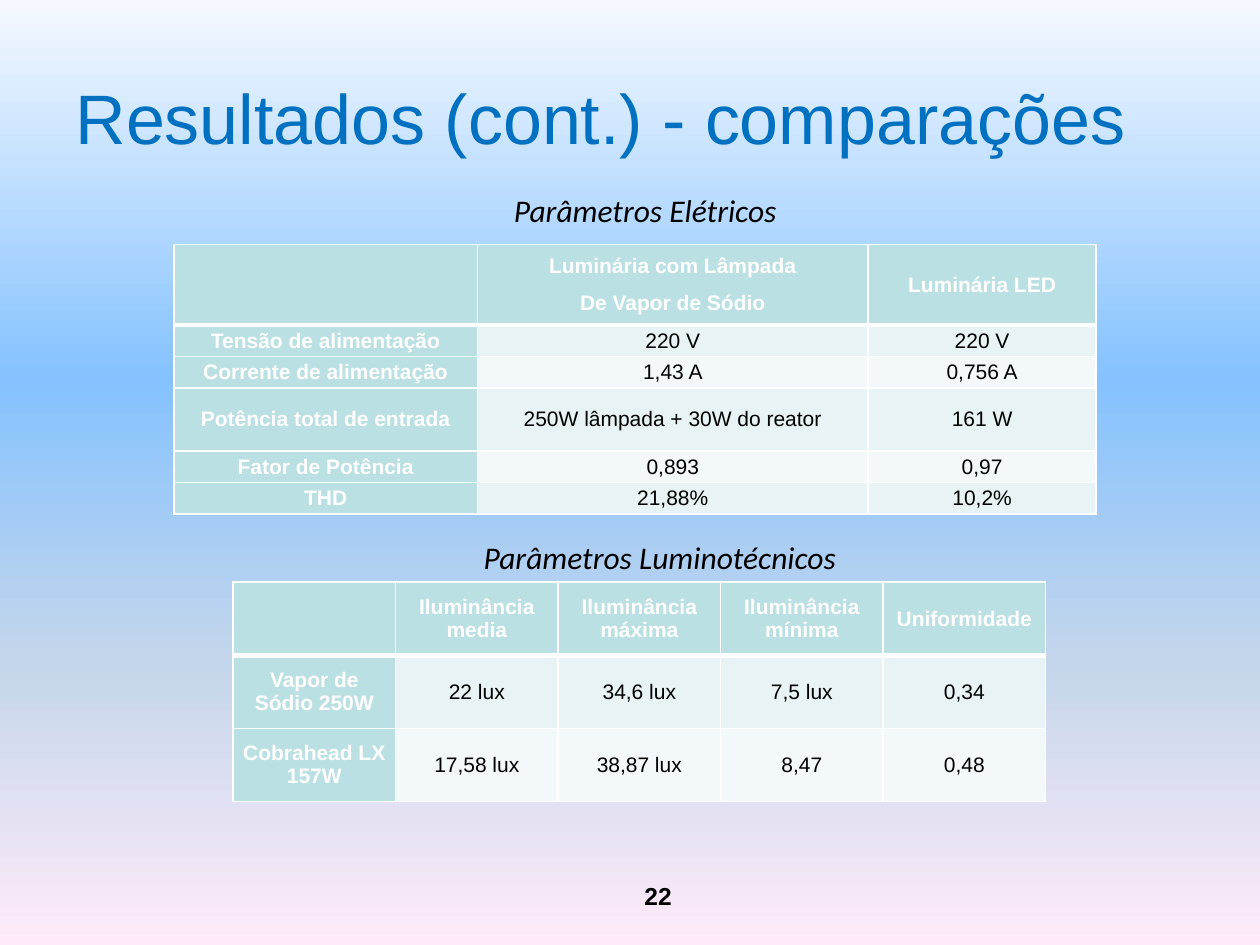
from pptx import Presentation
from pptx.dml.color import RGBColor
from pptx.enum.text import MSO_ANCHOR as Anchor, MSO_AUTO_SIZE as AutoSize, PP_ALIGN as Align
from pptx.oxml import parse_xml
from pptx.oxml.ns import nsdecls
from pptx.util import Inches, Pt

TITLE = "Resultados (cont.) - comparações"
PAGE_NUMBER = "22"
SECTIONS = [
    {
        "caption": "Parâmetros Elétricos",
        "caption_box": (3.98, 1.47, 2.31, 0.4),
        "origin": (1.38, 1.94),
        "columns": [2.41, 3.1, 1.81],
        "heights": [0.64, 0.25, 0.25, 0.5, 0.25, 0.25],
        "rows": [
            ["", "Luminária com Lâmpada\nDe Vapor de Sódio", "Luminária LED"],
            ["Tensão de alimentação", "220 V", "220 V"],
            ["Corrente de alimentação", "1,43 A", "0,756 A"],
            ["Potência total de entrada", "250W lâmpada + 30W do reator", "161 W"],
            ["Fator de Potência", "0,893", "0,97"],
            ["THD", "21,88%", "10,2%"],
        ],
    },
    {
        "caption": "Parâmetros Luminotécnicos",
        "caption_box": (3.74, 4.22, 3.03, 0.4),
        "origin": (1.85, 4.62),
        "columns": [1.29] * 5,
        "heights": [0.58] * 3,
        "rows": [
            ["", "Iluminância media", "Iluminância máxima", "Iluminância mínima", "Uniformidade"],
            ["Vapor de Sódio 250W", "22 lux", "34,6 lux", "7,5 lux", "0,34"],
            ["Cobrahead LX 157W", "17,58 lux", "38,87 lux", "8,47", "0,48"],
        ],
    },
]

THEME = {
    "title": {"name": "Arial", "size": Pt(40), "color": "0070C0"},
    "caption": {"name": "Calibri", "size": Pt(18), "italic": True, "color": "000000"},
    "number": {"name": "Arial", "size": Pt(14), "bold": True, "color": "000000"},
    "heading": {"name": "Arial", "size": Pt(12), "bold": True, "color": "FFFFFF"},
    "value": {"name": "Arial", "size": Pt(12), "bold": False, "color": "000000"},
    "heading_fill": "BBE0E3",
    "band_fills": ["F3F9FA", "E7F3F4"],
    "border": "FFFFFF",
    "thin": 1,
    "thick": 3,
    "background": [(0, "F5F9FF"), (40, "85C2FF"), (70, "C4D6EB"), (100, "FFEBFA")],
}
CELL_FORMAT = {
    "vertical_anchor": Anchor.MIDDLE,
    "margin_left": Inches(0.07),
    "margin_right": Inches(0.07),
    "margin_top": 0,
    "margin_bottom": 0,
}


def write(frame, text, style, align):
    frame.text = text
    for index, para in enumerate(frame.paragraphs):
        para.alignment = align
        if index:
            para.space_before = Pt(8)
        for span in para.runs:
            for name, value in THEME[style].items():
                if name == "color":
                    span.font.color.rgb = RGBColor.from_string(value)
                else:
                    setattr(span.font, name, value)


def add_text(page, text, place, style, align=Align.LEFT):
    box = page.shapes.add_textbox(*map(Inches, place))
    box.text_frame.word_wrap = False
    box.text_frame.auto_size = AutoSize.SHAPE_TO_FIT_TEXT
    write(box.text_frame, text, style, align)


def paint_background(page):
    fill = page.background.fill
    fill.gradient()
    fill.gradient_angle = 270
    stops = "".join(
        f'<a:gs pos="{share * 1000}"><a:srgbClr val="{color}"/></a:gs>'
        for share, color in THEME["background"]
    )
    old = page.background._cSld.xpath(".//a:gsLst")[0]
    old.getparent().replace(old, parse_xml(f'<a:gsLst {nsdecls("a")}>{stops}</a:gsLst>'))


def add_borders(cell, row):
    weights = {side: THEME["thin"] for side in "LRTB"}
    if row == 0:
        weights["B"] = THEME["thick"]
    elif row == 1:
        weights["T"] = THEME["thick"]
    properties = cell._tc.get_or_add_tcPr()
    for side, weight in weights.items():
        properties.append(parse_xml(
            f'<a:ln{side} {nsdecls("a")} w="{Pt(weight)}"><a:solidFill>'
            f'<a:srgbClr val="{THEME["border"]}"/></a:solidFill></a:ln{side}>'
        ))


def add_section(page, section):
    add_text(page, section["caption"], section["caption_box"], "caption")
    columns, heights, rows = section["columns"], section["heights"], section["rows"]
    size = (*section["origin"], sum(columns), sum(heights))
    table = page.shapes.add_table(len(rows), len(columns), *map(Inches, size)).table
    table.first_col = True
    table.horz_banding = False
    for column, width in zip(table.columns, columns):
        column.width = Inches(width)
    for row, height in zip(table.rows, heights):
        row.height = Inches(height)
    for r, texts in enumerate(rows):
        for c, text in enumerate(texts):
            cell = table.cell(r, c)
            heading = r == 0 or c == 0
            for name, value in CELL_FORMAT.items():
                setattr(cell, name, value)
            add_borders(cell, r)
            cell.fill.solid()
            color = THEME["heading_fill"] if heading else THEME["band_fills"][r % 2]
            cell.fill.fore_color.rgb = RGBColor.from_string(color)
            write(cell.text_frame, text, "heading" if heading else "value", Align.CENTER)


def main():
    deck = Presentation()
    deck.slide_width, deck.slide_height = Inches(10), Inches(7.5)
    page = deck.slides.add_slide(deck.slide_layouts[5])
    paint_background(page)
    title = page.shapes.title
    title.left, title.top, title.width, title.height = map(Inches, (0.5, 0.3, 9, 1.25))
    title.text_frame.vertical_anchor = Anchor.MIDDLE
    write(title.text_frame, TITLE, "title", Align.LEFT)
    for section in SECTIONS:
        add_section(page, section)
    add_text(page, PAGE_NUMBER, (4.76, 6.94, 0.67, 0.35), "number", Align.RIGHT)
    deck.save("out.pptx")


if __name__ == "__main__":
    main()
